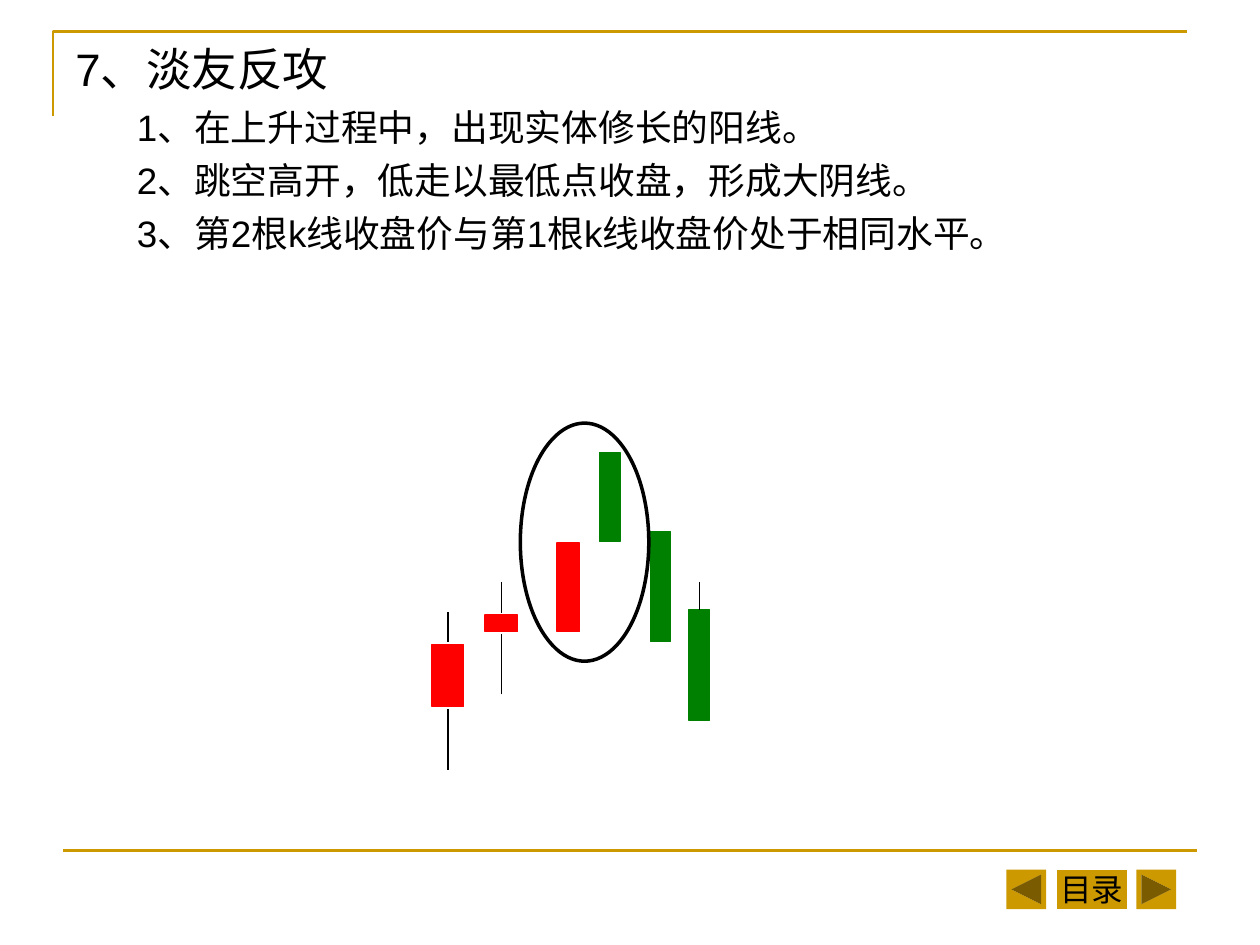
from typing import NamedTuple

from pptx import Presentation
from pptx.dml.color import RGBColor
from pptx.enum.shapes import MSO_CONNECTOR, MSO_SHAPE
from pptx.enum.text import MSO_ANCHOR, PP_ALIGN
from pptx.oxml.ns import qn
from pptx.util import Cm, Pt
from lxml.etree import SubElement

GOLD = RGBColor(0xCC, 0x99, 0x00)
RED = RGBColor(0xFF, 0x00, 0x00)
GREEN = RGBColor(0x00, 0x80, 0x00)
BLACK = RGBColor(0x00, 0x00, 0x00)
FONT = "Arial"
TOP, BOTTOM = 0, 2  # connection sites of a rectangle


class Candle(NamedTuple):
    """Body box in cm, with wick ends where there are wicks."""
    left: float
    top: float
    wide: float
    tall: float
    color: RGBColor
    high: float | None = None
    low: float | None = None
    gap: float = 0.05


class Button(NamedTuple):
    kind: MSO_SHAPE
    left: float
    wide: float
    label: str = ""


class Line(NamedTuple):
    text: str
    size: float
    before: float
    indent: float


CANDLES = [
    Candle(8.71, 13, 0.64, 1.24, RED, high=12.34, low=15.52),
    Candle(9.78, 12.4, 0.66, 0.33, RED, high=11.73, low=14),
    Candle(12.09, 9.12, 0.41, 1.8, GREEN),
    Candle(13.11, 10.72, 0.41, 2.21, GREEN),
    Candle(13.89, 12.29, 0.41, 2.24, GREEN, high=11.73, gap=0),
    Candle(11.23, 10.95, 0.46, 1.78, RED),
]
BUTTONS = [
    Button(MSO_SHAPE.ACTION_BUTTON_CUSTOM, 21.31, 1.4, "目录"),
    Button(MSO_SHAPE.ACTION_BUTTON_BACK_OR_PREVIOUS, 20.29, 0.8),
    Button(MSO_SHAPE.ACTION_BUTTON_FORWARD_OR_NEXT, 22.91, 0.8),
]
LINES = [
    Line("7、淡友反攻", 26, 6, 0),
    Line("1、在上升过程中，出现实体修长的阳线。", 21, 5, 1.24),
    Line("2、跳空高开，低走以最低点收盘，形成大阴线。", 21, 5, 1.24),
    Line("3、第2根k线收盘价与第1根k线收盘价处于相同水平。", 21, 5, 1.24),
]


def add_run(para, text: str, size: float) -> None:
    run = para.add_run()
    run.text = text
    run.font.name = FONT
    run.font.size = Pt(size)
    run.font.color.rgb = BLACK


def draw_shape(shapes, kind, left, top, wide, tall, fill=None, edge=None, width=0.75):
    shape = shapes.add_shape(kind, Cm(left), Cm(top), Cm(wide), Cm(tall))
    paint(shape, fill, edge, width)
    return shape


def paint(shape, fill=None, edge=None, width=0.75) -> None:
    """Set fill and edge; None leaves that part empty."""
    shape.shadow.inherit = False
    if fill is None:
        shape.fill.background()
    else:
        shape.fill.solid()
        shape.fill.fore_color.rgb = fill
    if edge is None:
        shape.line.fill.background()
    else:
        shape.line.color.rgb = edge
        shape.line.width = Pt(width)


def draw_line(shapes, x1, y1, x2, y2, color, width):
    line = shapes.add_connector(MSO_CONNECTOR.STRAIGHT, Cm(x1), Cm(y1), Cm(x2), Cm(y2))
    line.line.color.rgb = color
    line.line.width = Pt(width)
    SubElement(line._element.spPr, qn("a:effectLst"))
    return line


def draw_frame(shapes) -> None:
    """Corner rule at the top and straight rule at the foot."""
    pen = shapes.build_freeform(Cm(1.07), Cm(2.34))
    pen.add_line_segments([(Cm(1.07), Cm(0.64)), (Cm(23.93), Cm(0.64))], close=False)
    paint(pen.convert_to_shape(), edge=GOLD, width=1.5)
    draw_line(shapes, 1.27, 17.15, 24.13, 17.15, GOLD, 1.5)


def draw_button(shapes, button: Button) -> None:
    shape = draw_shape(shapes, button.kind, button.left, 17.53, button.wide, 0.8, GOLD)
    if button.label:
        frame = shape.text_frame
        frame.word_wrap = False
        frame.vertical_anchor = MSO_ANCHOR.MIDDLE
        para = frame.paragraphs[0]
        para.alignment = PP_ALIGN.CENTER
        add_run(para, button.label, 18)


def draw_text(shapes, lines: list[Line]) -> None:
    frame = shapes.add_textbox(Cm(1.27), Cm(0.71), Cm(22.86), Cm(16.31)).text_frame
    frame.word_wrap = True
    for i, line in enumerate(lines):
        para = frame.add_paragraph() if i else frame.paragraphs[0]
        para.space_before = Pt(line.before)
        para._p.get_or_add_pPr().set("marL", str(Cm(line.indent)))
        add_run(para, line.text, line.size)


def draw_candle(shapes, candle: Candle) -> None:
    left, top, wide, tall, color, high, low, gap = candle
    body = draw_shape(shapes, MSO_SHAPE.RECTANGLE, left, top, wide, tall, color, color)
    mid = left + wide / 2
    base = top + tall
    for tip, end, site in ((high, top - gap, TOP), (low, base + gap, BOTTOM)):
        if tip is not None:
            wick = draw_line(shapes, mid, tip, mid, end, BLACK, 0.75)
            if not gap:
                wick.end_connect(body, site)


def main() -> None:
    deck = Presentation()
    deck.slide_width, deck.slide_height = Cm(25.4), Cm(19.05)
    shapes = deck.slides.add_slide(deck.slide_layouts[6]).shapes
    draw_frame(shapes)
    for button in BUTTONS:
        draw_button(shapes, button)
    draw_text(shapes, LINES)
    chart = shapes.add_group_shape().shapes
    for candle in CANDLES:
        draw_candle(chart, candle)
    draw_shape(shapes, MSO_SHAPE.OVAL, 10.49, 8.53, 2.59, 4.8, edge=BLACK, width=2)
    deck.save("out.pptx")


if __name__ == "__main__":
    main()
